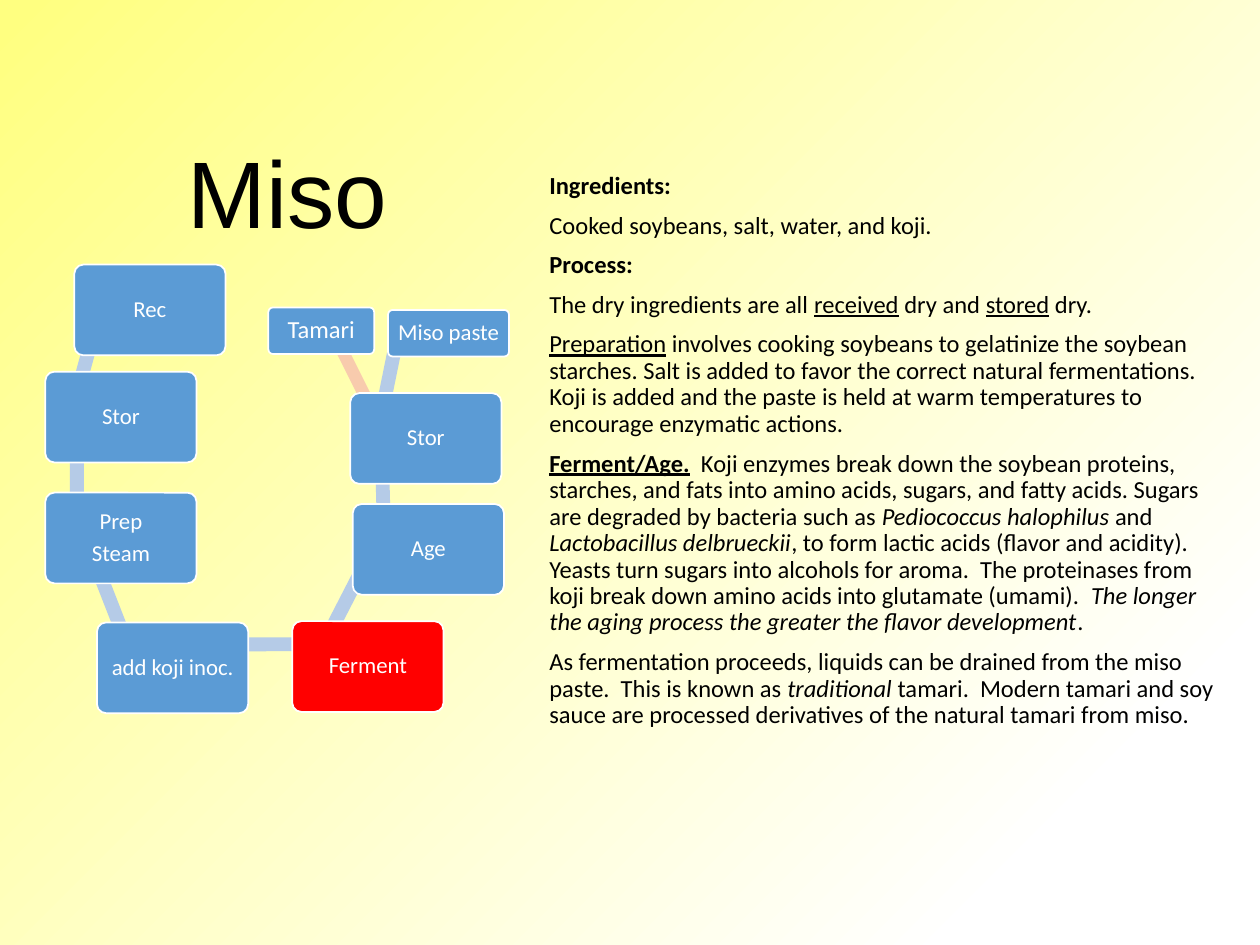
from dataclasses import dataclass
from typing import NamedTuple, Optional

from lxml.etree import SubElement
from pptx import Presentation
from pptx.dml.color import RGBColor
from pptx.enum.shapes import MSO_CONNECTOR, MSO_SHAPE
from pptx.enum.text import MSO_ANCHOR as Anchor, MSO_AUTO_SIZE as AutoSize, PP_ALIGN as Align
from pptx.oxml.ns import qn
from pptx.util import Inches, Pt


@dataclass(frozen=True)
class Theme:
    black: str = "000000"
    white: str = "FFFFFF"
    yellow: str = "FFFF80"
    blue: str = "5B9BD5"
    red: str = "FF0000"
    bar: str = "B5CBE7"
    branch: str = "F8CBAD"
    heading_font: str = "Arial"
    text_font: str = "Calibri"
    title_size: float = 54
    body_size: float = 14
    step_size: float = 13


THEME = Theme()


class Bar(NamedTuple):
    left: float
    top: float
    length: float
    rotation: float


class Step(NamedTuple):
    lines: tuple
    left: float
    top: float
    bar: Optional[Bar] = None
    width: float = 1.2
    height: float = 0.72
    fill: str = THEME.blue
    size: float = THEME.step_size


class Span(NamedTuple):
    text: str
    style: str = ""  # any of b (bold), i (italic), u (underline)


BAR_THICKNESS = 0.11
STEPS = [
    Step(("Rec",), 0.59, 2.1, Bar(0.29, 2.65, 0.87, 105.3)),
    Step(("Stor",), 0.36, 2.95, Bar(0.14, 3.56, 0.94, 90)),
    Step(("Prep", "Steam"), 0.36, 3.91, Bar(0.26, 4.55, 1.1, 68.7)),
    Step(("add koji inoc.",), 0.77, 4.94, Bar(1.02, 5.06, 1.55, 359.9)),
    Step(("Ferment",), 2.32, 4.93, Bar(2.29, 4.59, 1.04, 297.2), fill=THEME.red),
    Step(("Age",), 2.8, 4, Bar(2.6, 3.69, 0.87, 268.5)),
    Step(("Stor",), 2.78, 3.12, Bar(2.68, 2.83, 0.86, 281.5)),
    Step(("Miso paste",), 3.08, 2.46, width=0.96, height=0.37),
    Step(("Tamari",), 2.13, 2.44, width=0.84, height=0.37, size=THEME.body_size),
]

BODY = [
    [Span("Ingredients:", "b")],
    [Span("Cooked soybeans, salt, water, and koji.")],
    [Span("Process:", "b")],
    [Span("The dry ingredients are all "), Span("received", "u"), Span(" dry and "),
     Span("stored", "u"), Span(" dry.")],
    [Span("Preparation", "u"),
     Span(" involves cooking soybeans to gelatinize the soybean starches. Salt is added to favor "
          "the correct natural fermentations.  Koji is added and the paste is held at warm "
          "temperatures to encourage enzymatic actions.")],
    [Span("Ferment/Age.", "bu"),
     Span("  Koji enzymes break down the soybean proteins, starches, and fats into amino acids, "
          "sugars, and fatty acids. Sugars are degraded by bacteria such as "),
     Span("Pediococcus halophilus ", "i"), Span("and "), Span("Lactobacillus delbrueckii", "i"),
     Span(", to form lactic acids (flavor and acidity). Yeasts turn sugars into alcohols for "
          "aroma.  The proteinases from koji break down amino acids into glutamate (umami).  "),
     Span("The longer the aging process the greater the flavor development", "i"), Span(".")],
    [Span("As fermentation proceeds, liquids can be drained from the miso paste.  This is known as "),
     Span("traditional", "i"),
     Span(" tamari.  Modern tamari and soy sauce are processed derivatives of the natural tamari "
          "from miso.")],
]


def color(value: str) -> RGBColor:
    return RGBColor.from_string(value)


def apply(target, values: dict) -> None:
    for name, value in values.items():
        setattr(target, name, value)


def place(shape, left: float, top: float, width: float, height: float) -> None:
    apply(shape, dict(left=Inches(left), top=Inches(top),
                      width=Inches(width), height=Inches(height)))


def add_run(paragraph, span: Span, size: float, fill: str, font_name: str) -> None:
    run = paragraph.add_run()
    run.text = span.text
    apply(run.font, dict(size=Pt(size), name=font_name, bold="b" in span.style,
                         italic="i" in span.style, underline="u" in span.style))
    run.font.color.rgb = color(fill)


def paragraph_at(frame, index: int):
    return frame.add_paragraph() if index else frame.paragraphs[0]


def paint_background(slide) -> None:
    fill = slide.background.fill
    fill.gradient()
    fill.gradient_angle = 315
    stops = ((0.01, THEME.yellow), (0.86, THEME.white))
    for stop, (position, value) in zip(fill.gradient_stops, stops):
        stop.position = position
        stop.color.rgb = color(value)


def write_title(title) -> None:
    place(title, 1.38, 1.01, 1.8, 1.01)
    frame = title.text_frame
    apply(frame, dict(word_wrap=False, auto_size=AutoSize.SHAPE_TO_FIT_TEXT,
                      vertical_anchor=Anchor.TOP))
    paragraph = frame.paragraphs[0]
    paragraph.alignment = Align.CENTER
    add_run(paragraph, Span("Miso"), THEME.title_size, THEME.black, THEME.heading_font)


def write_body(body) -> None:
    place(body, 4.26, 1.07, 5.51, 5.02)
    frame = body.text_frame
    apply(frame, dict(word_wrap=True, auto_size=AutoSize.NONE, vertical_anchor=Anchor.MIDDLE))
    for index, spans in enumerate(BODY):
        paragraph = paragraph_at(frame, index)
        apply(paragraph, dict(line_spacing=0.9, space_before=Pt(7.5 if index else 0)))
        properties = paragraph._p.get_or_add_pPr()
        properties.set("marL", "0")
        properties.set("indent", "0")
        SubElement(properties, qn("a:buNone"))
        for span in spans:
            add_run(paragraph, span, THEME.body_size, THEME.black, THEME.text_font)


def add_branch(slide) -> None:
    """Draw the side line from the second storage step to tamari."""
    line = slide.shapes.add_connector(
        MSO_CONNECTOR.STRAIGHT, Inches(2.64), Inches(2.63), Inches(2.98), Inches(3.31))
    line.line.color.rgb = color(THEME.branch)
    line.line.width = Pt(7)
    SubElement(line._element.spPr, qn("a:effectLst"))


def add_filled(slide, kind, left: float, top: float, width: float, height: float, fill: str):
    shape = slide.shapes.add_shape(
        kind, Inches(left), Inches(top), Inches(width), Inches(height))
    shape.shadow.inherit = False
    shape.fill.solid()
    shape.fill.fore_color.rgb = color(fill)
    return shape


def add_bar(slide, bar: Bar) -> None:
    shape = add_filled(slide, MSO_SHAPE.RECTANGLE, bar.left, bar.top, bar.length,
                       BAR_THICKNESS, THEME.bar)
    shape.line.fill.background()
    shape.rotation = bar.rotation


def add_step(slide, step: Step) -> None:
    """Draw one process box above the bar that leads on to the next step."""
    if step.bar:
        add_bar(slide, step.bar)
    box = add_filled(slide, MSO_SHAPE.ROUNDED_RECTANGLE, step.left, step.top,
                     step.width, step.height, step.fill)
    box.adjustments[0] = 0.1
    box.line.color.rgb = color(THEME.white)
    box.line.width = Pt(1)
    frame = box.text_frame
    sides = ("left", "top", "right", "bottom")
    apply(frame, {f"margin_{side}": Inches(0.06) for side in sides})
    apply(frame, dict(word_wrap=True, vertical_anchor=Anchor.MIDDLE))
    for index, text in enumerate(step.lines):
        paragraph = paragraph_at(frame, index)
        apply(paragraph, dict(alignment=Align.CENTER, line_spacing=0.9,
                              space_after=Pt(0.35 * step.size)))
        add_run(paragraph, Span(text), step.size, THEME.white, THEME.text_font)


def main() -> None:
    presentation = Presentation()
    apply(presentation, dict(slide_width=Inches(10), slide_height=Inches(7.5)))
    slide = presentation.slides.add_slide(presentation.slide_layouts[1])
    paint_background(slide)
    write_title(slide.shapes.title)
    write_body(slide.placeholders[1])
    add_branch(slide)
    for step in STEPS:
        add_step(slide, step)
    presentation.save("out.pptx")


if __name__ == "__main__":
    main()
